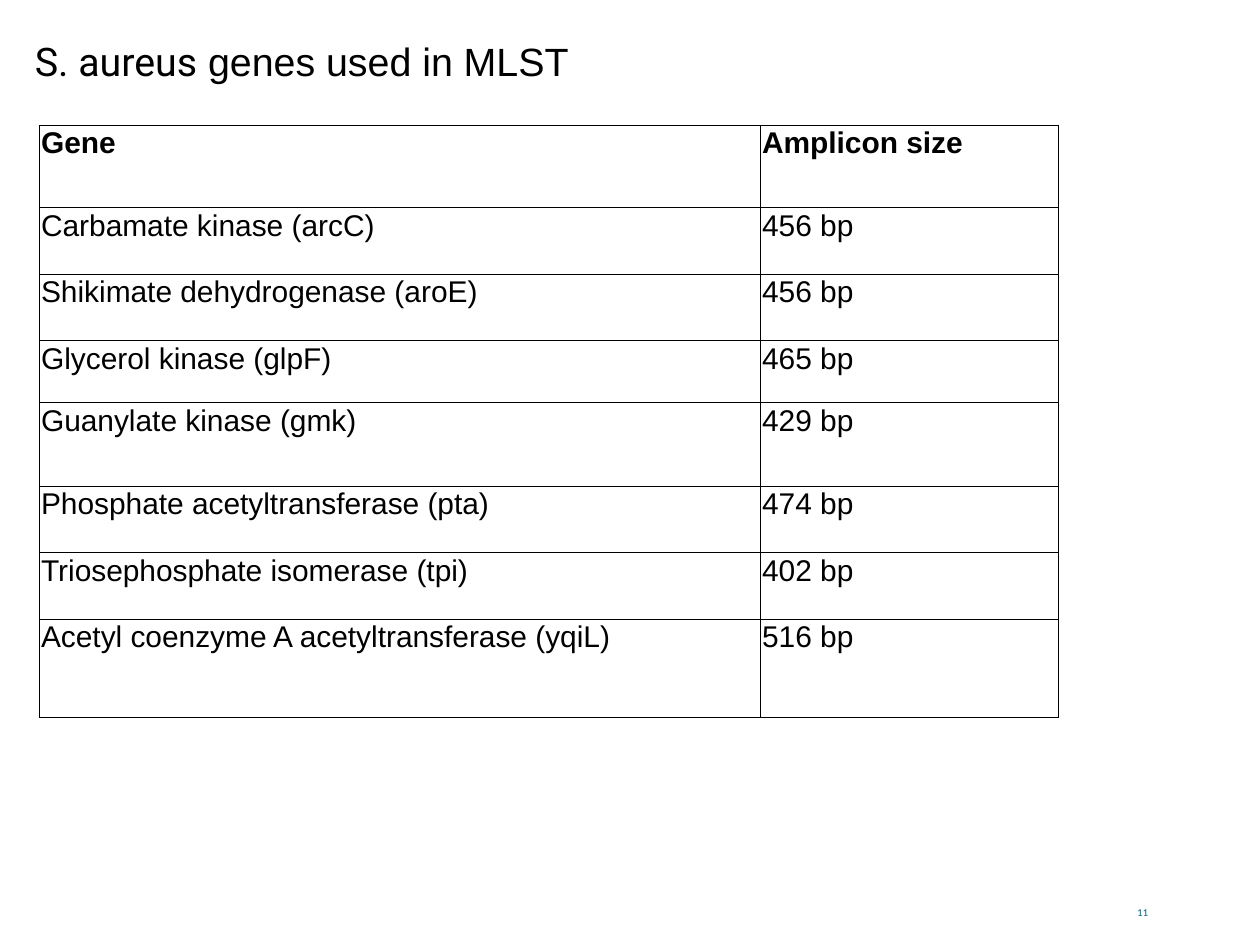
from dataclasses import dataclass

from lxml import etree
from pptx import Presentation
from pptx import util as u
from pptx.dml.color import RGBColor
from pptx.enum import text
from pptx.oxml import ns

TITLE = (("S. aureus", "Roboto"), (" genes used in MLST", "Arial"))
PAGE_NUMBER = "11"
HEADER = ("Gene", "Amplicon size")
GENES = [
    ("Carbamate kinase (arcC)", "456 bp"),
    ("Shikimate dehydrogenase (aroE)", "456 bp"),
    ("Glycerol kinase (glpF)", "465 bp"),
    ("Guanylate kinase (gmk)", "429 bp"),
    ("Phosphate acetyltransferase (pta)", "474 bp"),
    ("Triosephosphate isomerase (tpi)", "402 bp"),
    ("Acetyl coenzyme A acetyltransferase (yqiL)", "516 bp"),
]
COLUMN_WIDTHS = (16.15, 6.67)
ROW_HEIGHTS = (1.84, 1.49, 1.49, 1.39, 1.87, 1.49, 1.49, 2.19)


@dataclass(frozen=True)
class Theme:
    ink: RGBColor = RGBColor(0, 0, 0)
    paper: RGBColor = RGBColor(255, 255, 255)
    accent: RGBColor = RGBColor(0x04, 0x5C, 0x75)
    body_font: str = "Arial"
    number_font: str = "Lato"
    title_size: u.Pt = u.Pt(25)
    table_size: u.Pt = u.Pt(19)
    number_size: u.Pt = u.Pt(6)
    border: u.Pt = u.Pt(0.6)
    cell_margin: u.Cm = u.Cm(0.03)


THEME = Theme()


def set_font(font, name, size, color, bold=False):
    font.name, font.size, font.bold = name, size, bold
    font.color.rgb = color


def set_margins(frame, margin):
    frame.margin_left = frame.margin_right = margin
    frame.margin_top = frame.margin_bottom = margin


def add_borders(cell):
    properties = cell._tc.get_or_add_tcPr()
    for side in ("a:lnL", "a:lnR", "a:lnT", "a:lnB"):
        line = etree.SubElement(properties, ns.qn(side), w=str(int(THEME.border)))
        fill = etree.SubElement(line, ns.qn("a:solidFill"))
        etree.SubElement(fill, ns.qn("a:srgbClr"), val=str(THEME.ink))


def add_title(slide):
    title = slide.shapes.title
    title.left, title.top = u.Cm(0.78), u.Cm(0.84)
    title.width, title.height = u.Cm(20.85), u.Cm(1.47)
    frame = title.text_frame
    set_margins(frame, 0)
    frame.word_wrap = True
    frame.auto_size = text.MSO_AUTO_SIZE.NONE
    frame.vertical_anchor = text.MSO_ANCHOR.TOP
    heading = frame.paragraphs[0]
    heading.alignment = text.PP_ALIGN.LEFT
    for words, font_name in TITLE:
        run = heading.add_run()
        run.text = words
        set_font(run.font, font_name, THEME.title_size, THEME.ink)


def add_gene_table(slide):
    rows = [HEADER, *GENES]
    table = slide.shapes.add_table(
        len(rows), len(HEADER), u.Cm(0.89), u.Cm(2.81),
        u.Cm(sum(COLUMN_WIDTHS)), u.Cm(sum(ROW_HEIGHTS))).table
    table.horz_banding = False
    for column, width in zip(table.columns, COLUMN_WIDTHS):
        column.width = u.Cm(width)
    for row, height in zip(table.rows, ROW_HEIGHTS):
        row.height = u.Cm(height)
    for r, entries in enumerate(rows):
        for c, entry in enumerate(entries):
            cell = table.cell(r, c)
            cell.text = entry
            set_margins(cell, THEME.cell_margin)
            add_borders(cell)
            cell.fill.solid()
            cell.fill.fore_color.rgb = THEME.paper
            set_font(cell.text_frame.paragraphs[0].font, THEME.body_font,
                     THEME.table_size, THEME.ink, bold=r == 0)


def add_page_number(slide):
    box = slide.shapes.add_textbox(u.Cm(25.32), u.Cm(20.17), u.Cm(0.56), u.Cm(0.53))
    frame = box.text_frame
    frame.margin_left = frame.margin_right = 0
    frame.word_wrap = False
    frame.vertical_anchor = text.MSO_ANCHOR.BOTTOM
    number = frame.paragraphs[0]
    number.text = PAGE_NUMBER
    number.alignment = text.PP_ALIGN.CENTER
    set_font(number.font, THEME.number_font, THEME.number_size, THEME.accent)


def main():
    deck = Presentation()
    deck.slide_width, deck.slide_height = u.Cm(28.22), u.Cm(21.16)
    slide = deck.slides.add_slide(deck.slide_layouts.get_by_name("Title Only"))
    add_title(slide)
    add_gene_table(slide)
    add_page_number(slide)
    deck.save("out.pptx")


if __name__ == "__main__":
    main()
